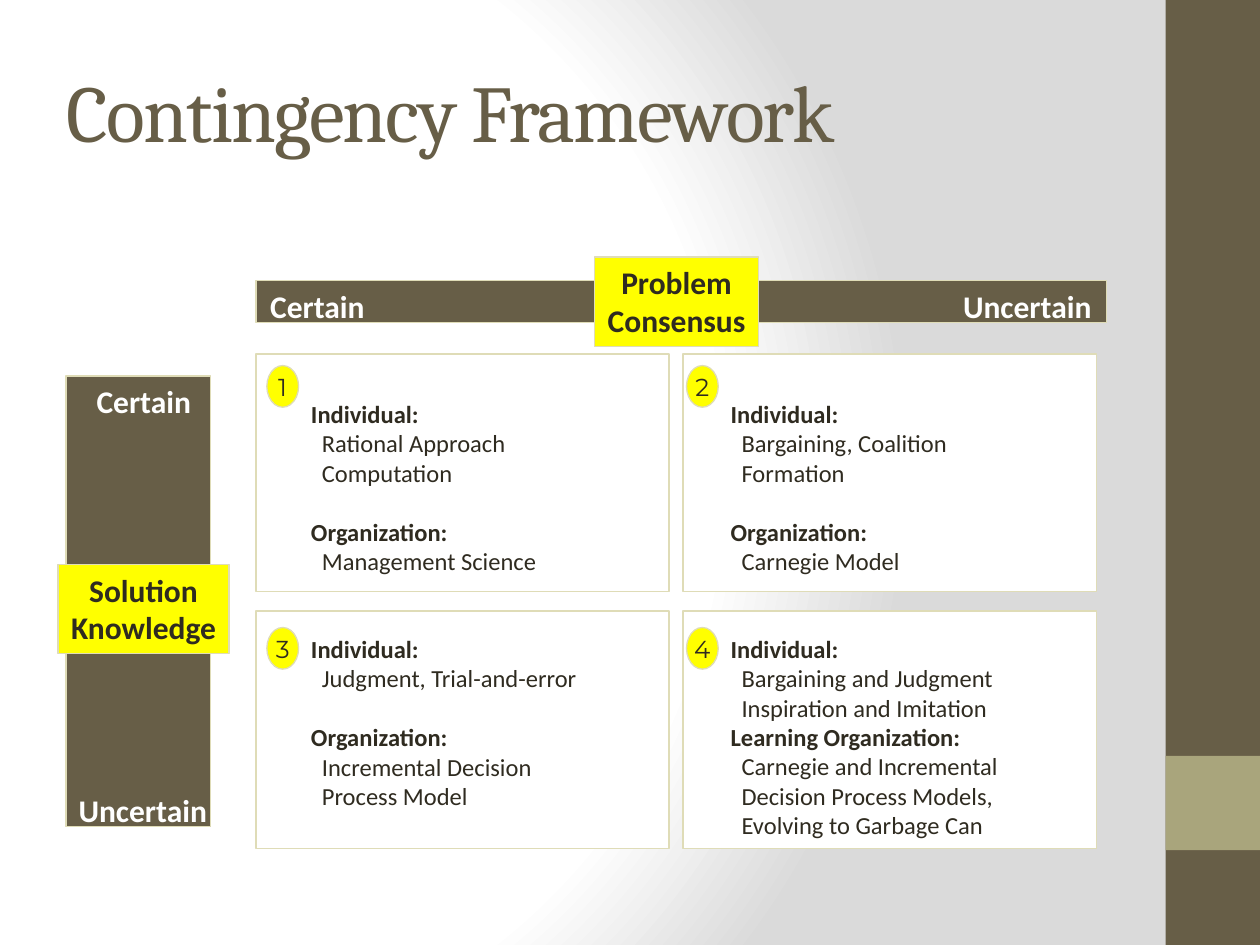
from dataclasses import dataclass
from itertools import product

from pptx import Presentation
from pptx.dml.color import RGBColor
from pptx.enum.shapes import MSO_SHAPE
from pptx.enum.text import MSO_ANCHOR, MSO_AUTO_SIZE, PP_ALIGN
from pptx.oxml import parse_xml
from pptx.oxml.ns import nsdecls
from pptx.util import Cm, Pt


@dataclass(frozen=True)
class Theme:
    brown: str = "675E47"
    olive: str = "A9A57C"
    cream: str = "DFDCB7"
    ink: str = "2F2B20"
    white: str = "FFFFFF"
    grey: str = "DADADA"
    yellow: str = "FFFF00"
    title_font: str = "Cambria"
    body_font: str = "Calibri"
    number_font: str = "Montserrat"
    title_size: int = 46
    label_size: int = 18
    body_size: int = 14
    gap: int = 17


@dataclass(frozen=True)
class Area:
    """A rectangle in centimetres."""
    left: float
    top: float
    width: float
    height: float

    def lengths(self) -> list:
        return [Cm(v) for v in (self.left, self.top, self.width, self.height)]


@dataclass(frozen=True)
class Section:
    heading: str
    methods: tuple
    gap_before: bool = False


@dataclass(frozen=True)
class Label:
    text: str
    area: Area


THEME = Theme()

# Quadrants in reading order
QUADRANTS = [
    (Section("Individual:", ("Rational Approach", "Computation")),
     Section("Organization:", ("Management Science",), True)),
    (Section("Individual:", ("Bargaining, Coalition", "Formation")),
     Section("Organization:", ("Carnegie Model",), True)),
    (Section("Individual:", ("Judgment, Trial-and-error",)),
     Section("Organization:", ("Incremental Decision", "Process Model"), True)),
    (Section("Individual:", ("Bargaining and Judgment", "Inspiration and Imitation")),
     Section("Learning Organization:", ("Carnegie and Incremental",
                                        "Decision Process Models,",
                                        "Evolving to Garbage Can"))),
]
CARD_LEFTS, CARD_TOPS = (5.16, 13.77), (7.14, 12.32)
BADGE_LEFTS, BADGE_TOPS = (5.38, 13.84), (7.37, 12.65)
TEXT_TOPS = (7.92, 12.65)
BADGE_WIDTH = 0.64

AXIS_BARS = [Area(5.16, 5.66, 17.15, 0.84), Area(1.33, 7.58, 2.92, 9.09)]
AXIS_ENDS = [
    Label("Certain", Area(5.18, 5.66, 2.44, 1.02)),
    Label("Uncertain", Area(19.15, 5.66, 3.12, 1.02)),
    Label("Certain", Area(1.68, 7.57, 2.44, 1.02)),
    Label("Uncertain", Area(1.32, 15.82, 3.12, 1.02)),
]
AXIS_NAMES = [
    Label("Solution\nKnowledge", Area(1.17, 11.38, 3.45, 1.8)),
    Label("Problem\nConsensus", Area(11.99, 5.18, 3.3, 1.8)),
]


def color(value: str) -> RGBColor:
    return RGBColor.from_string(value)


def set_font(para, name: str, size: int, fill: str, bold: bool = False) -> None:
    font = para.font
    font.name, font.size, font.bold = name, Pt(size), bold
    font.color.rgb = color(fill)


def add_panel(page, area: Area, fill: str, outlined: bool = True,
              kind=MSO_SHAPE.RECTANGLE):
    box = page.shapes.add_shape(kind, *area.lengths())
    box.shadow.inherit = False
    box.fill.solid()
    box.fill.fore_color.rgb = color(fill)
    if outlined:
        box.line.color.rgb = color(THEME.cream)
        box.line.width = Pt(0.75)
    else:
        box.line.fill.background()
    return box


def write_centered(box, text: str, name: str, size: int, fill: str,
                   bold: bool, anchor=MSO_ANCHOR.TOP) -> None:
    frame = box.text_frame
    frame.text = text
    frame.word_wrap = False
    frame.vertical_anchor = anchor
    for para in frame.paragraphs:
        para.alignment = PP_ALIGN.CENTER
        set_font(para, name, size, fill, bold)


def add_sections(page, area: Area, sections: tuple) -> None:
    frame = page.shapes.add_textbox(*area.lengths()).text_frame
    frame.word_wrap = True
    lines = [(text, section, text == section.heading)
             for section in sections
             for text in (section.heading, *section.methods)]
    for index, (text, section, is_heading) in enumerate(lines):
        para = frame.add_paragraph() if index else frame.paragraphs[0]
        para.text = text
        set_font(para, THEME.body_font, THEME.body_size, THEME.ink, is_heading)
        if not is_heading:
            para._p.get_or_add_pPr().set("marL", str(Cm(0.22)))
        elif section.gap_before:
            para.space_before = Pt(THEME.gap)


def add_background(page) -> None:
    stops = "".join(
        f'<a:gs pos="{place * 1000}"><a:srgbClr val="{value}"/></a:gs>'
        for place, value in ((0, THEME.white), (75, THEME.white), (100, THEME.grey)))
    page.element.cSld.insert(0, parse_xml(
        f'<p:bg {nsdecls("p", "a")}><p:bgPr><a:gradFill rotWithShape="1">'
        f'<a:gsLst>{stops}</a:gsLst><a:path path="circle">'
        '<a:fillToRect l="20000" t="50000" r="100000" b="50000"/></a:path>'
        '</a:gradFill><a:effectLst/></p:bgPr></p:bg>'))


def add_title(page, text: str) -> None:
    title = page.shapes.title
    title.left, title.top, title.width, title.height = Area(1.09, 0.64, 21.16, 3.18).lengths()
    frame = title.text_frame
    frame.text = text
    frame.auto_size = MSO_AUTO_SIZE.NONE
    frame.vertical_anchor = MSO_ANCHOR.MIDDLE
    para = frame.paragraphs[0]
    para.alignment = PP_ALIGN.LEFT
    set_font(para, THEME.title_font, THEME.title_size, THEME.brown)
    para.runs[0]._r.get_or_add_rPr().set("spc", "-100")


def main() -> None:
    deck = Presentation()
    deck.slide_width, deck.slide_height = Cm(25.4), Cm(19.05)
    page = deck.slides.add_slide(deck.slide_layouts[5])

    # Backdrop and title
    add_background(page)
    add_panel(page, Area(23.5, 0, 1.9, 19.05), THEME.brown, outlined=False)
    add_panel(page, Area(23.5, 15.24, 1.9, 1.9), THEME.olive, outlined=False)
    add_title(page, "Contingency Framework")

    # Axes
    for area in AXIS_BARS:
        add_panel(page, area, THEME.brown)
    for label in AXIS_ENDS:
        box = page.shapes.add_textbox(*label.area.lengths())
        write_centered(box, label.text, THEME.body_font, THEME.label_size, THEME.white, True)

    # Quadrants with their numbers
    for index, (row, column) in enumerate(product(range(2), repeat=2)):
        add_panel(page, Area(CARD_LEFTS[column], CARD_TOPS[row], 8.33, 4.78), THEME.white)
        badge_left = BADGE_LEFTS[column]
        add_sections(page, Area(badge_left + BADGE_WIDTH, TEXT_TOPS[row], 6.5, 3.84),
                     QUADRANTS[index])
        badge = add_panel(page, Area(badge_left, BADGE_TOPS[row], BADGE_WIDTH, 0.84),
                          THEME.yellow, kind=MSO_SHAPE.OVAL)
        write_centered(badge, str(index + 1), THEME.number_font, THEME.body_size,
                       THEME.ink, False, MSO_ANCHOR.MIDDLE)

    # Axis names on top of the bars
    for label in AXIS_NAMES:
        tag = add_panel(page, label.area, THEME.yellow)
        write_centered(tag, label.text, THEME.body_font, THEME.label_size, THEME.ink, True)

    deck.save("out.pptx")


if __name__ == "__main__":
    main()
